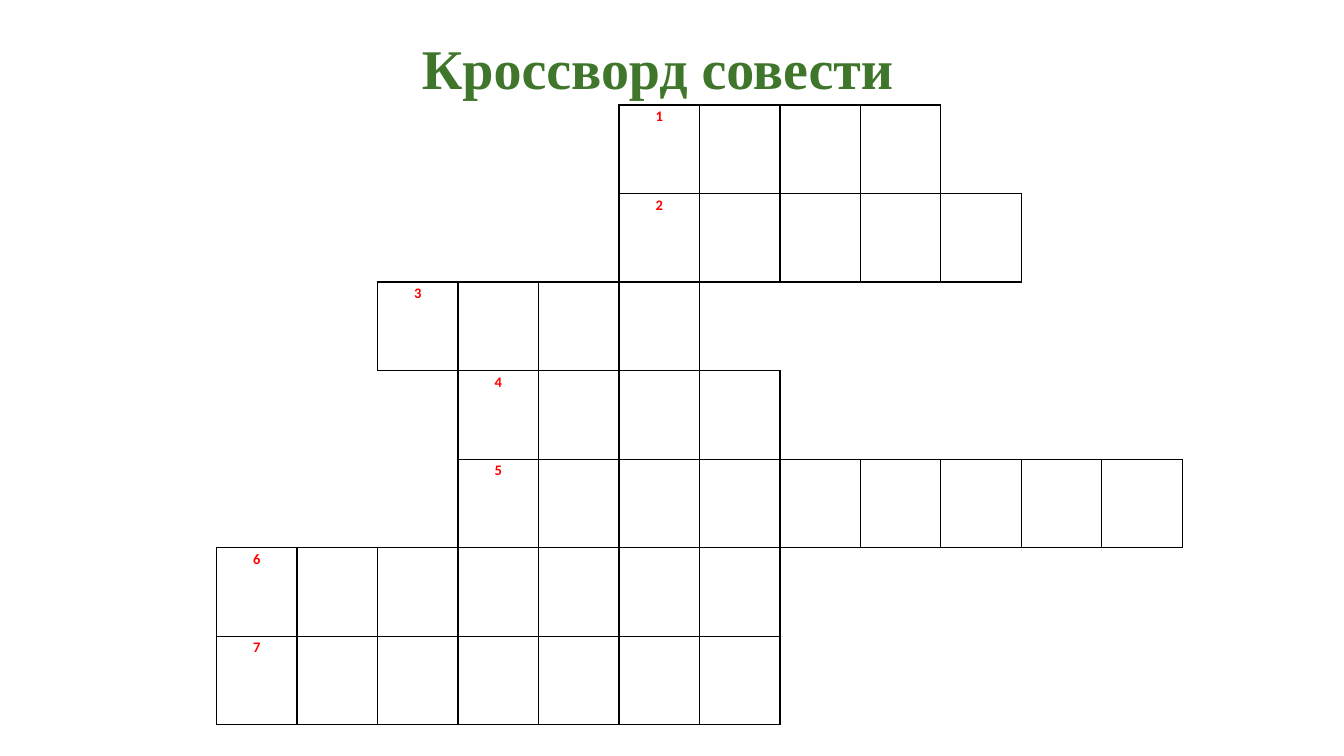
"""Build a slide with an empty seven-word crossword grid."""
from lxml import etree
from pptx import Presentation
from pptx.dml.color import RGBColor
from pptx.enum.text import MSO_ANCHOR, MSO_AUTO_SIZE, PP_ALIGN
from pptx.oxml.ns import qn
from pptx.util import Pt

CENTER = PP_ALIGN.CENTER
TOP = MSO_ANCHOR.TOP
GROW = MSO_AUTO_SIZE.SHAPE_TO_FIT_TEXT
TITLE_ONLY = 5
COLUMNS = 15
COLUMN_WIDTH, ROW_HEIGHT = 57.5, 63.25
WORDS = [(6, 4), (6, 5), (3, 4), (4, 4), (4, 9), (1, 7), (1, 7)]
SIDES = {"a:lnL": (0, -1), "a:lnR": (0, 1), "a:lnT": (-1, 0), "a:lnB": (1, 0)}
LINE_COLOR = "000000"


def style_run(run, font_name, size, color):
    run.font.name = font_name
    run.font.size = Pt(size)
    run.font.bold = True
    run.font.color.rgb = RGBColor.from_string(color)


def add_border(cell, side, visible):
    line = etree.SubElement(cell._tc.get_or_add_tcPr(), qn(side), w=str(Pt(1)))
    if visible:
        fill = etree.SubElement(line, qn("a:solidFill"))
        etree.SubElement(fill, qn("a:srgbClr"), val=LINE_COLOR)
    else:
        etree.SubElement(line, qn("a:noFill"))


presentation = Presentation()
presentation.slide_width = Pt(960)
presentation.slide_height = Pt(540)
slide = presentation.slides.add_slide(presentation.slide_layouts[TITLE_ONLY])

title = slide.shapes.title
title.left, title.top, title.width, title.height = Pt(188.6), Pt(20.2), Pt(562.3), Pt(55.4)
title.text_frame.text = "Кроссворд совести"
title.text_frame.auto_size = GROW
title_paragraph = title.text_frame.paragraphs[0]
title_paragraph.alignment = CENTER
style_run(title_paragraph.runs[0], "Times New Roman", 40, "3F762B")

table = slide.shapes.add_table(
    len(WORDS), COLUMNS, Pt(97.2), Pt(75),
    Pt(COLUMNS * COLUMN_WIDTH), Pt(len(WORDS) * ROW_HEIGHT)).table
table.first_row = False
table.horz_banding = False
for column in table.columns:
    column.width = Pt(COLUMN_WIDTH)
for row in table.rows:
    row.height = Pt(ROW_HEIGHT)

letters = {(row, column) for row, (start, length) in enumerate(WORDS)
           for column in range(start, start + length)}
for row in range(len(WORDS)):
    for column in range(COLUMNS):
        cell = table.cell(row, column)
        for side, (down, right) in SIDES.items():
            neighbour = (row + down, column + right)
            add_border(cell, side, (row, column) in letters or neighbour in letters)
        cell.fill.background()

for row, (start, length) in enumerate(WORDS):
    cell = table.cell(row, start)
    cell.vertical_anchor = TOP
    cell.margin_left = cell.margin_right = Pt(5)
    cell.margin_top = cell.margin_bottom = Pt(0)
    cell.text_frame.text = str(row + 1)
    paragraph = cell.text_frame.paragraphs[0]
    paragraph.alignment = CENTER
    number = paragraph.runs[0]
    style_run(number, "Calibri", 18, "FF0000")
    number._r.get_or_add_rPr().set("baseline", "30000")

presentation.save("out.pptx")
